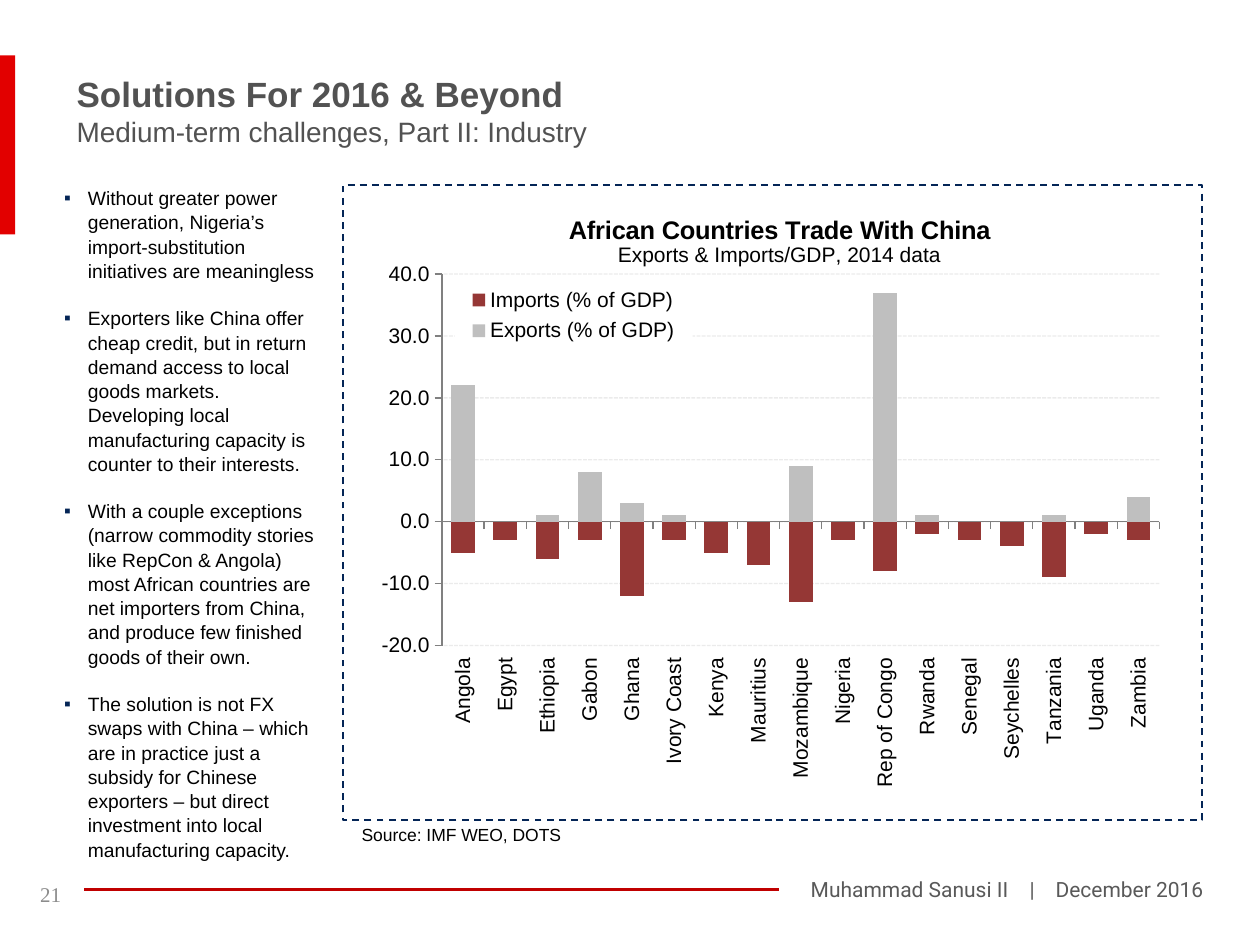
from dataclasses import dataclass

from lxml.etree import SubElement
from pptx import Presentation
from pptx.chart.data import CategoryChartData
from pptx.dml.color import RGBColor
from pptx.enum.chart import (XL_CHART_TYPE, XL_LEGEND_POSITION,
                             XL_TICK_LABEL_POSITION, XL_TICK_MARK)
from pptx.enum.dml import MSO_LINE
from pptx.enum.shapes import MSO_CONNECTOR, MSO_SHAPE
from pptx.enum.text import MSO_ANCHOR, PP_ALIGN
from pptx.oxml import parse_xml
from pptx.oxml.ns import nsdecls, qn
from pptx.util import Pt

HEAD = "Solutions For 2016 & Beyond"
SUBHEAD = "Medium-term challenges, Part II: Industry"
POINTS = [
    "Without greater power generation, Nigeria’s import-substitution "
    "initiatives are meaningless",
    "Exporters like China offer cheap credit, but in return demand access to "
    "local goods markets. Developing local manufacturing capacity is counter "
    "to their interests.",
    "With a couple exceptions (narrow commodity stories like RepCon & Angola) "
    "most African countries are net importers from China, and produce few "
    "finished goods of their own.",
    "The solution is not FX swaps with China – which are in practice just a "
    "subsidy for Chinese exporters – but direct investment into local "
    "manufacturing capacity.",
]
SOURCE = "Source: IMF WEO, DOTS"
SPEAKER, DATE, PAGE = "Muhammad Sanusi II", "December 2016", "21"
TITLE = "African Countries Trade With China"
SUBTITLE = "Exports & Imports/GDP, 2014 data"
SERIES = ("Exports (% of GDP)", "Imports (% of GDP)")
TRADE = [
    ("Angola", 22, -5), ("Egypt", 0, -3), ("Ethiopia", 1, -6),
    ("Gabon", 8, -3), ("Ghana", 3, -12), ("Ivory Coast", 1, -3),
    ("Kenya", 0, -5), ("Mauritius", 0, -7), ("Mozambique", 9, -13),
    ("Nigeria", 0, -3), ("Rep of Congo", 37, -8), ("Rwanda", 1, -2),
    ("Senegal", 0, -3), ("Seychelles", 0, -4), ("Tanzania", 1, -9),
    ("Uganda", 0, -2), ("Zambia", 4, -3),
]


@dataclass(frozen=True)
class Theme:
    sans: str = "Arial"
    foot: str = "Roboto"
    serif: str = "Times New Roman"
    ink: str = "000000"
    head: str = "525252"
    grey: str = "595959"
    pale: str = "8C8C8C"
    axis: str = "808080"
    red: str = "E20000"
    rule: str = "C00000"
    navy: str = "042556"
    bars: tuple = ("BFBFBF", "953735")
    big: float = 20
    mid: float = 16
    chart: float = 14.5
    base: float = 12
    body: float = 11
    small: float = 10


T = Theme()
TOP, HIGH = 105.84, 362.88
CHART = (201.6, TOP, 485.28, HIGH)
FRAME = (195.84, TOP, 491.04, HIGH)


def rgb(code):
    return RGBColor.from_string(code)


def style(font, size, color=T.ink, name=T.sans, bold=False):
    for key, value in dict(size=Pt(size), name=name, bold=bold).items():
        setattr(font, key, value)
    font.color.rgb = rgb(color)


def add_run(para, text, *look, **more):
    run = para.add_run()
    run.text = text
    style(run.font, *look, **more)
    return run


def add_box(slide, area, pads=(7.2, 3.6, 7.2, 3.6), anchor=MSO_ANCHOR.TOP):
    frame = slide.shapes.add_textbox(*map(Pt, area)).text_frame
    sides = ("margin_left", "margin_top", "margin_right", "margin_bottom")
    for side, pad in zip(sides, pads):
        setattr(frame, side, Pt(pad))
    frame.word_wrap, frame.vertical_anchor = True, anchor
    return frame


def add_rect(slide, area):
    shape = slide.shapes.add_shape(MSO_SHAPE.RECTANGLE, *map(Pt, area))
    shape.shadow.inherit = False
    return shape


def add_bullet(para):
    props = para._p.get_or_add_pPr()
    props.set("marL", str(Pt(13.5)))
    props.set("indent", str(Pt(-13.5)))
    tint = SubElement(props, qn("a:buClr"))
    SubElement(tint, qn("a:srgbClr"), val=T.navy)
    SubElement(props, qn("a:buFont"), typeface=T.sans)
    SubElement(props, qn("a:buChar"), char="▪")


def place(part, **spots):
    """Give a chart part a manual layout in fractions of the chart."""
    for old in part.findall(qn("c:layout")):
        part.remove(old)
    modes = dict(xMode="edge", yMode="edge")
    if "layoutTarget" in spots:
        modes = dict(layoutTarget=spots.pop("layoutTarget"), **modes)
    tags = "".join(f'<c:{k} val="{v}"/>' for k, v in {**modes, **spots}.items())
    layout = parse_xml(f'<c:layout {nsdecls("c")}><c:manualLayout>{tags}'
                       '</c:manualLayout></c:layout>')
    before = part.find(qn("c:tx"))
    if before is None:
        before = part.find(qn("c:legendPos"))
    if before is None:
        part.insert(0, layout)
    else:
        before.addnext(layout)


def paint(fill):
    return parse_xml(f'<c:spPr {nsdecls("c", "a")}>{fill}</c:spPr>')


def add_chart(slide):
    data = CategoryChartData(number_format="0.0")
    data.categories = [row[0] for row in TRADE]
    for col, name in enumerate(SERIES, 1):
        data.add_series(name, [row[col] for row in TRADE])
    chart = slide.shapes.add_chart(
        XL_CHART_TYPE.COLUMN_STACKED, *map(Pt, CHART), data).chart
    style(chart.font, T.small)
    chart._chartSpace.find(qn("c:chart")).addnext(paint("<a:noFill/>"))

    text = chart.chart_title.text_frame
    add_run(text.paragraphs[0], TITLE, T.chart, bold=True)
    add_run(text.add_paragraph(), SUBTITLE, T.base)
    chart.chart_title.include_in_layout = True
    place(chart.chart_title._element, x=0.25, y=0.04)

    plot = chart.plots[0]
    plot.gap_width, plot.overlap, plot.vary_by_categories = 78, 100, False
    for bars, color in zip(plot.series, T.bars):
        bars.format.fill.solid()
        bars.format.fill.fore_color.rgb = rgb(color)
        bars.invert_if_negative = False
    place(chart._chartSpace.find(".//" + qn("c:plotArea")),
          layoutTarget="inner", x=0.105, y=0.14, w=0.845, h=0.585)

    cats, vals = chart.category_axis, chart.value_axis
    for axis in (cats, vals):
        axis.major_tick_mark = XL_TICK_MARK.OUTSIDE
        axis.format.line.color.rgb = rgb(T.axis)
        style(axis.tick_labels.font, T.base)
    cats.tick_label_position = XL_TICK_LABEL_POSITION.LOW
    cats._element.find(".//" + qn("a:bodyPr")).set("rot", "-5400000")
    scale = dict(minimum_scale=-20, maximum_scale=40, major_unit=10)
    for key, value in scale.items():
        setattr(vals, key, value)
    vals.tick_labels.number_format = "0.0"
    vals.tick_labels.number_format_is_linked = False
    grid = vals.major_gridlines.format.line
    grid.width, grid.dash_style = Pt(0.75), MSO_LINE.SQUARE_DOT
    grid.color.rgb = rgb(T.ink)
    tint = vals._element.find(".//" + qn("c:majorGridlines")).find(
        ".//" + qn("a:srgbClr"))
    SubElement(tint, qn("a:alpha"), val="8000")

    chart.has_legend = True
    legend = chart.legend
    legend.position = XL_LEGEND_POSITION.RIGHT
    legend.include_in_layout = False
    style(legend.font, T.base)
    place(legend._element, x=0.12, y=0.15, w=0.28, h=0.11)
    legend._element.find(qn("c:txPr")).addprevious(
        paint('<a:solidFill><a:srgbClr val="FFFFFF"/></a:solidFill>'))


def add_footer(slide):
    para = add_box(slide, (405.36, 497.5, 289.44, 21.6)).paragraphs[0]
    para.alignment = PP_ALIGN.RIGHT
    for text in (SPEAKER, " ", "|", " ", DATE):
        run = add_run(para, text, T.base, T.grey, T.foot)
        if text == " ":
            run.font._element.set("spc", "900")
    line = slide.shapes.add_connector(
        MSO_CONNECTOR.STRAIGHT, Pt(48.24), Pt(508.32), Pt(445), Pt(508.32))
    line.line.color.rgb, line.line.width = rgb(T.rule), Pt(1.5)
    SubElement(line._element.spPr, qn("a:effectLst"))
    page = add_box(slide, (15.84, 500.4, 30.96, 24.48))
    add_run(page.paragraphs[0], PAGE, T.base, T.pale, T.serif)


def main():
    deck = Presentation()
    deck.slide_width, deck.slide_height = Pt(720), Pt(540)
    slide = deck.slides.add_slide(deck.slide_layouts[6])

    add_footer(slide)
    tab = add_rect(slide, (0, 31.68, 8.64, 102.24))
    tab.fill.solid()
    tab.fill.fore_color.rgb = rgb(T.red)
    tab.line.fill.background()

    head = add_box(slide, (36.72, 37.44, 623.52, 51.12),
                   anchor=MSO_ANCHOR.MIDDLE)
    add_run(head.paragraphs[0], HEAD, T.big, T.head, bold=True)
    add_run(head.add_paragraph(), SUBHEAD, T.mid, T.head)

    body = add_box(slide, (36.72, TOP, 143.28, 380.16), (0, 0, 0, 0))
    for num, text in enumerate(POINTS):
        para = body.add_paragraph() if num else body.paragraphs[0]
        para.line_spacing, para.space_before = 1.05, Pt(13.2 if num else 0)
        add_bullet(para)
        add_run(para, text, T.body)

    frame = add_rect(slide, FRAME)
    frame.fill.background()
    frame.line.color.rgb, frame.line.width = rgb(T.navy), Pt(1)
    frame.line.dash_style = MSO_LINE.DASH
    note = add_box(slide, (201.6, 468.72, 260.64, 17.28), (5, 2.2, 5, 2.9))
    add_run(note.paragraphs[0], SOURCE, T.small)
    add_chart(slide)
    deck.save("out.pptx")


if __name__ == "__main__":
    main()
